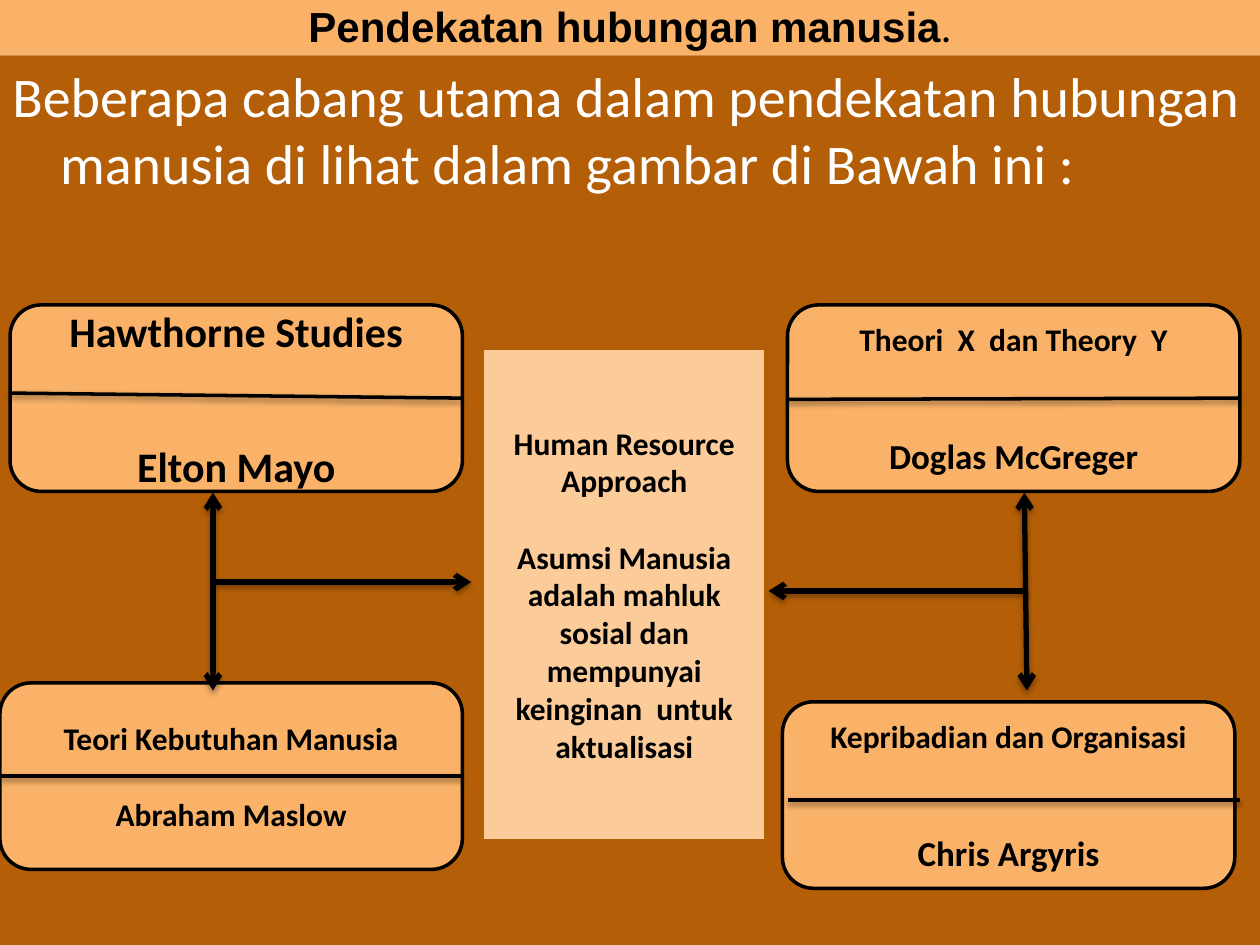
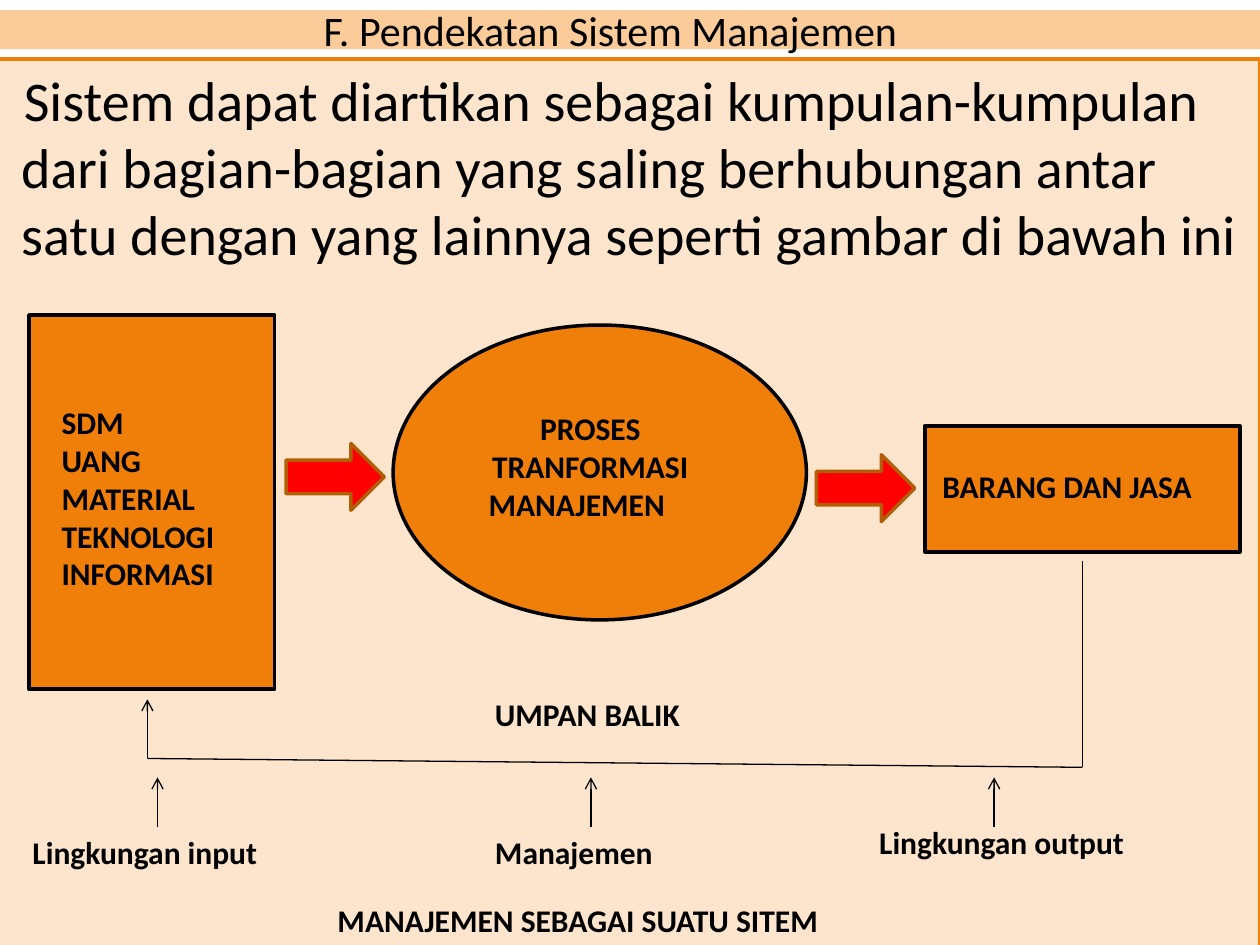
from dataclasses import dataclass
from lxml import etree
from pptx import Presentation
from pptx.dml.color import RGBColor
from pptx.enum.shapes import MSO_CONNECTOR, MSO_SHAPE
from pptx.enum.text import MSO_ANCHOR, MSO_AUTO_SIZE, PP_ALIGN
from pptx.oxml.ns import qn
from pptx.util import Inches, Pt

RECTANGLE, ROUNDED = MSO_SHAPE.RECTANGLE, MSO_SHAPE.ROUNDED_RECTANGLE
OVAL, RIGHT_ARROW = MSO_SHAPE.OVAL, MSO_SHAPE.RIGHT_ARROW
STRAIGHT = MSO_CONNECTOR.STRAIGHT
TOP, MIDDLE = MSO_ANCHOR.TOP, MSO_ANCHOR.MIDDLE
NO_FIT, FIT_SHAPE = MSO_AUTO_SIZE.NONE, MSO_AUTO_SIZE.SHAPE_TO_FIT_TEXT
LEFT, CENTER = PP_ALIGN.LEFT, PP_ALIGN.CENTER
COLUMNS, ROWS = 100, 75
TITLE_ONLY = 5


@dataclass(frozen=True)
class Theme:
    black: str = "000000"
    white: str = "FFFFFF"
    brown: str = "B45F07"
    border: str = "B25E07"
    orange: str = "F07F09"
    apricot: str = "F9B268"
    peach: str = "FBCC9A"
    cream: str = "FDE5CD"
    red: str = "FF0000"
    font: str = "Calibri"
    title_font: str = "Arial"
    body: int = 32
    heading: int = 24
    name: int = 20
    label: int = 18
    blank_line: float = 1.22
    thin: float = 0.75
    outline: int = 2
    arrow: int = 3


THEME = Theme()


class SlideBuilder:
    """Draws on the current slide, with lengths in grid columns and rows."""

    def __init__(self, presentation, theme):
        self.presentation, self.theme = presentation, theme
        self.column = presentation.slide_width / COLUMNS
        self.row = presentation.slide_height / ROWS
        self.slide = None

    def new_slide(self):
        layout = self.presentation.slide_layouts[TITLE_ONLY]
        self.slide = self.presentation.slides.add_slide(layout)

    def place(self, columns, rows):
        return round(columns * self.column), round(rows * self.row)

    def box(self, left, top, width, height):
        return *self.place(left, top), *self.place(width, height)

    def paint(self, shape, fill, line=None):
        shape.fill.solid()
        shape.fill.fore_color.rgb = RGBColor.from_string(fill)
        if line:
            shape.line.color.rgb = RGBColor.from_string(line)
            shape.line.width = Pt(self.theme.outline)
        else:
            shape.line.fill.background()

    def set_frame(self, shape, **values):
        for name, value in values.items():
            setattr(shape.text_frame, name, value)

    def add_run(self, paragraph, text, **values):
        run = paragraph.add_run()
        run.text = text
        style = dict(name=self.theme.font, size=self.theme.label,
                     color=self.theme.black, bold=True) | values
        run.font.color.rgb = RGBColor.from_string(style.pop("color"))
        style["size"] = Pt(style["size"])
        for name, value in style.items():
            setattr(run.font, name, value)

    def add_lines(self, shape, lines, align=CENTER):
        """Each line is a text, or a text with a dict of format values."""
        for index, line in enumerate(lines):
            text, values = (line, {}) if isinstance(line, str) else line
            values = dict(values)
            frame = shape.text_frame
            paragraph = frame.add_paragraph() if index else frame.paragraphs[0]
            paragraph.alignment = values.pop("align", align)
            paragraph.space_before = Pt(values.pop("before", 0))
            properties = paragraph._p.get_or_add_pPr()
            for key in ("marL", "indent"):
                if key in values:
                    properties.set(key, str(Inches(values.pop(key))))
            self.add_run(paragraph, text, **values)

    def title(self, area, fill, runs):
        shape = self.slide.shapes.title
        shape.left, shape.top, shape.width, shape.height = self.box(*area)
        self.paint(shape, fill)
        self.set_frame(shape, auto_size=NO_FIT, vertical_anchor=MIDDLE,
                       word_wrap=True, margin_top=0, margin_bottom=0)
        paragraph = shape.text_frame.paragraphs[0]
        paragraph.alignment = CENTER
        for text, values in runs:
            self.add_run(paragraph, text, size=self.theme.heading, **values)

    def shape(self, kind, area, fill, line=None, lines=(), anchor=MIDDLE,
              align=CENTER):
        shape = self.slide.shapes.add_shape(kind, *self.box(*area))
        shape.shadow.inherit = False
        self.paint(shape, fill, line)
        self.set_frame(shape, word_wrap=True, vertical_anchor=anchor)
        self.add_lines(shape, lines, align)

    def body(self, area, fill, text, color, indent, line=None):
        values = dict(size=self.theme.body, color=color, bold=False,
                      marL=0.38, indent=indent, before=6.4)
        self.shape(RECTANGLE, area, fill, line, [(text, values)], TOP, LEFT)

    def text(self, area, lines, align=LEFT):
        shape = self.slide.shapes.add_textbox(*self.box(*area))
        self.set_frame(shape, word_wrap=False, auto_size=FIT_SHAPE)
        self.add_lines(shape, lines, align)

    def line(self, start, end, width, ends=(), shadow=None):
        """Shadow is a pair: opacity in percent and distance in points."""
        connector = self.slide.shapes.add_connector(
            STRAIGHT, *self.place(*start), *self.place(*end))
        connector.line.color.rgb = RGBColor.from_string(self.theme.black)
        connector.line.width = Pt(width)
        outline = connector.line._get_or_add_ln()
        for end_name in ends:
            etree.SubElement(outline, qn(f"a:{end_name}"), type="arrow")
        properties = connector._element.spPr
        effects = etree.SubElement(properties, qn("a:effectLst"))
        if shadow:
            opacity, distance = shadow
            outer = etree.SubElement(
                effects, qn("a:outerShdw"), blurRad=str(Pt(3.1)),
                dist=str(Pt(distance)), dir="5400000", rotWithShape="0")
            color = etree.SubElement(outer, qn("a:srgbClr"), val=self.theme.black)
            etree.SubElement(color, qn("a:alpha"), val=str(opacity * 1000))

    def card(self, area, heading, name, sizes, gap):
        """A rounded card: a theory above and its author below."""
        heading_size, name_size = sizes
        self.shape(ROUNDED, area, self.theme.apricot, self.theme.black, [
            (heading, dict(size=heading_size)),
            (name, dict(size=name_size, before=gap * self.theme.blank_line))])

    def divider(self, start, end):
        self.line(start, end, self.theme.outline, shadow=(38, 1.6))

    def bold_arrow(self, start, end, ends):
        self.line(start, end, self.theme.arrow, ends, shadow=(35, 1.8))


def human_relations(builder):
    theme = builder.theme
    builder.new_slide()
    builder.title((0, -0.3, 100, 4.7), theme.apricot, [
        ("Pendekatan hubungan manusia", dict(name=theme.title_font)),
        (".", dict(bold=False))])
    builder.body((0, 4.4, 100, 70.6), theme.brown,
                 "Beberapa cabang utama dalam pendekatan hubungan manusia "
                 "di lihat dalam gambar di Bawah ini :", theme.white, -0.38)

    # Theory cards with their dividers
    big, label, name = theme.heading, theme.label, theme.name
    cards = [
        ((0.8, 24.2, 35.9, 14.8), "Hawthorne Studies", "Elton Mayo",
         (big, big), 2 * name, (0.8, 31.2), (36.7, 31.6)),
        ((0, 54.2, 36.7, 14.8), "Teori Kebutuhan Manusia", "Abraham Maslow",
         (label, label), label, (0, 61.6), (36.7, 61.6)),
        ((62.5, 24.2, 35.9, 14.8), "Theori  X  dan Theory  Y",
         "Doglas McGreger", (label, name), 2 * label, (62.5, 31.7), (98.4, 31.6)),
        ((62.1, 55.7, 35.9, 14.8), "Kepribadian dan Organisasi",
         "Chris Argyris", (label, name), 2 * label, (62.5, 63.5), (98.4, 63.5)),
    ]
    for area, heading, author, sizes, gap, start, end in cards:
        builder.card(area, heading, author, sizes, gap)
        builder.divider(start, end)

    # Central approach
    builder.shape(RECTANGLE, (38.3, 27.6, 22.5, 39.1), theme.peach,
                  theme.border, [
                      "Human Resource", "Approach",
                      ("Asumsi Manusia adalah mahluk sosial dan mempunyai "
                       "keinginan  untuk aktualisasi",
                       dict(before=label * theme.blank_line))])

    # Links between the cards and towards the centre
    both, forward = ("headEnd", "tailEnd"), ("tailEnd",)
    for start, end, ends in [((16.9, 39.1), (16.9, 54.8), both),
                             ((16.9, 46.2), (37.4, 46.2), forward),
                             ((81.3, 39.1), (81.5, 54.8), both),
                             ((81.5, 46.9), (61, 46.9), forward)]:
        builder.bold_arrow(start, end, ends)


def management_system(builder):
    theme = builder.theme
    builder.new_slide()
    builder.title((-3.1, 0.8, 103.1, 3.1), theme.peach,
                  [("F. Pendekatan Sistem Manajemen", dict(bold=False))])
    builder.body((-3.1, 4.7, 103.1, 71.1), theme.cream,
                 "Sistem dapat diartikan sebagai kumpulan-kumpulan dari "
                 "bagian-bagian yang saling berhubungan antar satu dengan "
                 "yang lainnya seperti gambar di bawah ini",
                 theme.black, 0.02, theme.orange)

    # Input, process and output
    for kind, area in [(RECTANGLE, (2.3, 25, 19.5, 29.7)),
                       (OVAL, (31.2, 25.8, 32.8, 23.4)),
                       (RECTANGLE, (73.4, 33.8, 25, 10))]:
        builder.shape(kind, area, theme.orange, theme.black)
    builder.text((3.9, 31.5, 16.3, 16.2),
                 ["SDM", "UANG", "MATERIAL", "TEKNOLOGI", "INFORMASI"])
    builder.text((36.7, 32, 20.3, 10.1),
                 ["PROSES", "TRANFORMASI",
                  ("MANAJEMEN", dict(align=LEFT, marL=0.11))], CENTER)
    for left, top in [(22.7, 35.2), (64.8, 36.1)]:
        builder.shape(RIGHT_ARROW, (left, top, 7.8, 5.3), theme.red, theme.border)

    # Feedback loop
    corners = [(85.9, 44.5), (85.9, 60.9), (11.7, 60.2), (11.7, 55.5)]
    for start, end in zip(corners, corners[1:]):
        ends = ("tailEnd",) if end == corners[-1] else ()
        builder.line(start, end, theme.thin, ends)

    # Arrows from the surroundings
    for column in (12.5, 46.9, 78.9):
        builder.line((column, 65.6), (column, 61.7), theme.thin, ("tailEnd",))

    # Labels
    for left, top, width, label in [
            (73.8, 36.6, 24.9, "BARANG DAN JASA"),
            (1.6, 65.6, 23.6, "Lingkungan input"),
            (38.3, 65.6, 16.1, "Manajemen"),
            (68.8, 64.8, 25.4, "Lingkungan output"),
            (38.3, 54.7, 18.7, "UMPAN BALIK"),
            (25.8, 71, 45.2, "MANAJEMEN SEBAGAI SUATU SITEM")]:
        builder.text((left, top, width, 4), [label])


def main():
    presentation = Presentation()
    presentation.slide_width, presentation.slide_height = Inches(10), Inches(7.5)
    builder = SlideBuilder(presentation, THEME)
    human_relations(builder)
    management_system(builder)
    presentation.save("out.pptx")


if __name__ == "__main__":
    main()
